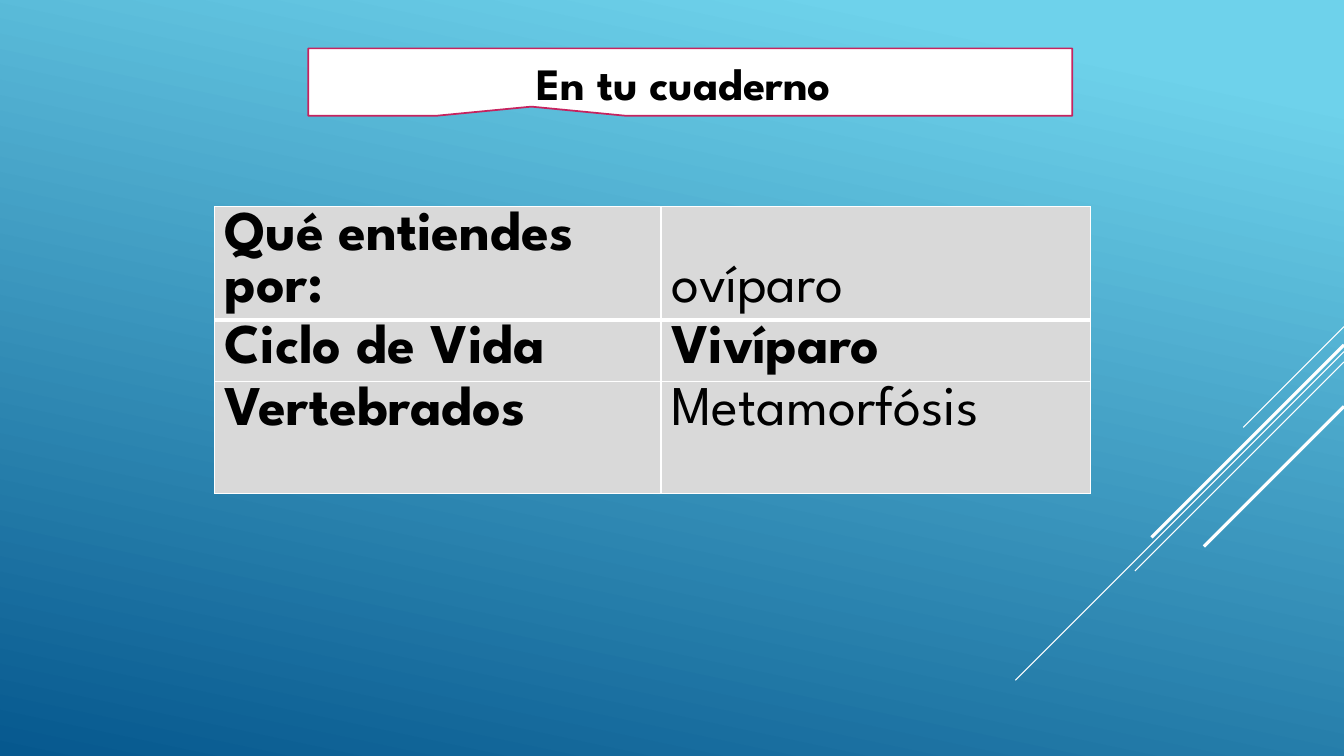
from dataclasses import dataclass

from lxml import etree
from pptx import Presentation
from pptx import util as u
from pptx.dml.color import RGBColor
from pptx.enum import shapes, text
from pptx.oxml import ns

FONT = "League Spartan"
WHITE, BLACK, GREY, PINK = "FFFFFF", "000000", "D9D9D9", "C6235F"
SLIDE_WIDTH, SLIDE_HEIGHT = 33.87, 19.05


@dataclass
class Ray:
    """A 45° line running down and left from the right edge of the slide."""
    top: float
    run: float
    weight: float


@dataclass
class Term:
    wording: str
    bold: bool = True
    anchor: text.MSO_ANCHOR = text.MSO_ANCHOR.TOP


RAYS = [
    Ray(8.23, 2.54, 0.75),
    Ray(8.86, 8.28, 0.75),
    Ray(9.12, 5.27, 0.75),
    Ray(8.69, 4.85, 2.25),
    Ray(10.24, 3.53, 2.25),
]
TERMS = [
    [Term("Qué entiendes por:"), Term("ovíparo", False, text.MSO_ANCHOR.BOTTOM)],
    [Term("Ciclo de Vida"), Term("Vivíparo")],
    [Term("Vertebrados"), Term("Metamorfósis", False)],
]
COLUMN_WIDTHS = [11.25, 10.82]
ROW_HEIGHTS = [2.84, 1.55, 2.84]


def color(value: str) -> RGBColor:
    return RGBColor.from_string(value)


def style_text(para, size: float, bold: bool) -> None:
    font = para.font
    font.name, font.size, font.bold = FONT, u.Pt(size), bold
    font.color.rgb = color(BLACK)


def paint_background(page) -> None:
    fill = page.background.fill
    fill.gradient()
    fill.gradient_angle = 258
    for stop, position, value in zip(fill.gradient_stops, (0.1, 1), ("6ED2EB", "06588E")):
        stop.position = position
        stop.color.rgb = color(value)


def draw_ray(page, ray: Ray) -> None:
    line = page.shapes.add_connector(
        shapes.MSO_CONNECTOR.STRAIGHT,
        u.Cm(SLIDE_WIDTH), u.Cm(ray.top),
        u.Cm(SLIDE_WIDTH - ray.run), u.Cm(ray.top + ray.run))
    line.line.color.rgb = color(WHITE)
    line.line.width = u.Pt(ray.weight)
    etree.SubElement(line._element.spPr, ns.qn("a:effectLst"))


def draw_border(cell, side: str, weight: float) -> None:
    properties = cell._tc.get_or_add_tcPr()
    border = etree.SubElement(properties, ns.qn(f"a:ln{side}"), w=str(u.Pt(weight)))
    fill = etree.SubElement(border, ns.qn("a:solidFill"))
    etree.SubElement(fill, ns.qn("a:srgbClr"), val=WHITE)


def draw_cell(cell, term: Term, row: int) -> None:
    heavy_side = {0: "B", 1: "T"}.get(row)
    for side in "LRTB":
        draw_border(cell, side, 3 if side == heavy_side else 1)
    cell.fill.solid()
    cell.fill.fore_color.rgb = color(GREY)
    cell.vertical_anchor = term.anchor
    para = cell.text_frame.paragraphs[0]
    para.text = term.wording
    style_text(para, 40, term.bold)


def draw_table(page) -> None:
    table = page.shapes.add_table(
        len(ROW_HEIGHTS), len(COLUMN_WIDTHS), u.Cm(5.41), u.Cm(5.21),
        u.Cm(sum(COLUMN_WIDTHS)), u.Cm(sum(ROW_HEIGHTS))).table
    table.first_row = table.horz_banding = False
    for column, width in zip(table.columns, COLUMN_WIDTHS):
        column.width = u.Cm(width)
    for row, height in enumerate(ROW_HEIGHTS):
        table.rows[row].height = u.Cm(height)
        for column, term in enumerate(TERMS[row]):
            draw_cell(table.cell(row, column), term, row)


def draw_title(page) -> None:
    box = page.shapes.add_shape(
        shapes.MSO_SHAPE.RECTANGULAR_CALLOUT,
        u.Cm(7.77), u.Cm(1.22), u.Cm(19.25), u.Cm(1.7))
    box.adjustments[0], box.adjustments[1] = -0.208, 0.364
    box.shadow.inherit = False
    box.fill.solid()
    box.fill.fore_color.rgb = color(WHITE)
    box.line.color.rgb = color(PINK)
    box.line.width = u.Pt(1.25)
    box.text_frame.word_wrap = True
    box.text_frame.vertical_anchor = text.MSO_ANCHOR.MIDDLE
    para = box.text_frame.paragraphs[0]
    para.text = "En tu cuaderno "
    para.alignment = text.PP_ALIGN.CENTER
    style_text(para, 32, True)


def main() -> None:
    deck = Presentation()
    deck.slide_width, deck.slide_height = u.Cm(SLIDE_WIDTH), u.Cm(SLIDE_HEIGHT)
    page = deck.slides.add_slide(deck.slide_layouts[6])
    paint_background(page)
    for ray in RAYS:
        draw_ray(page, ray)
    draw_table(page)
    draw_title(page)
    deck.save("out.pptx")


if __name__ == "__main__":
    main()
